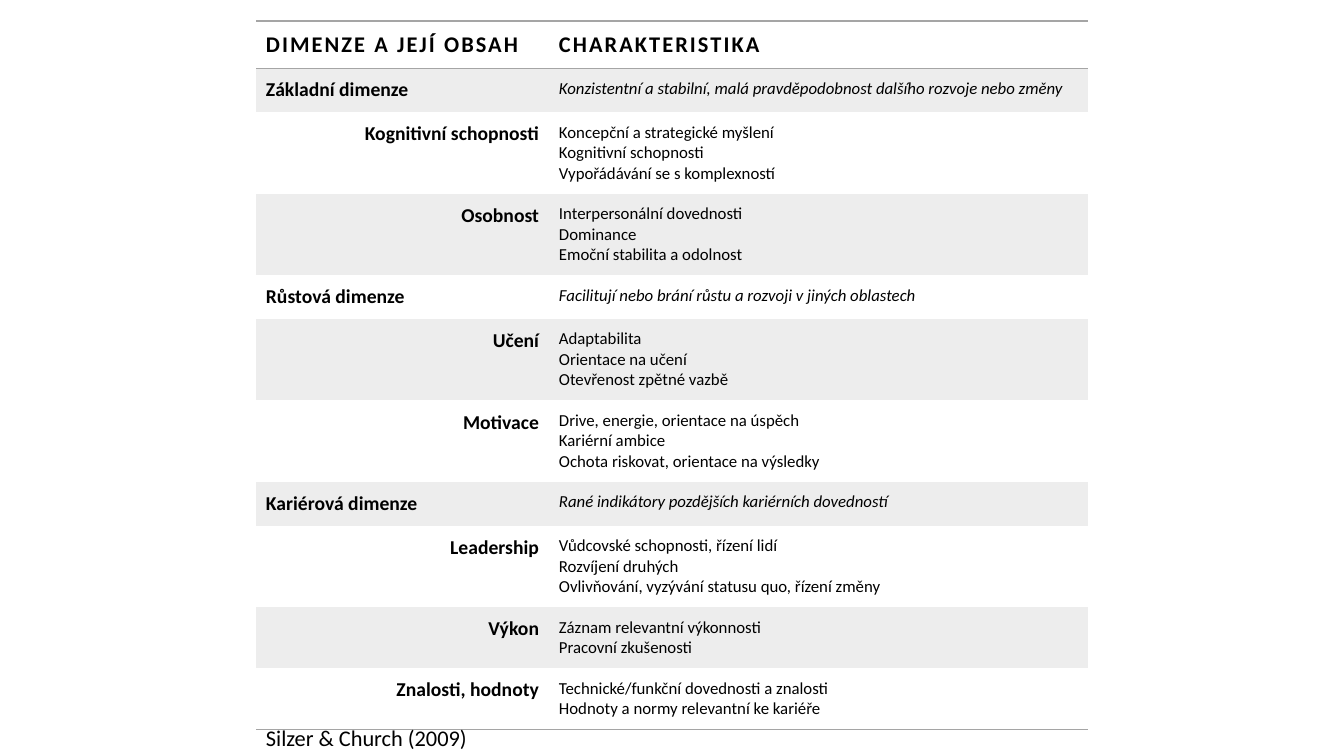
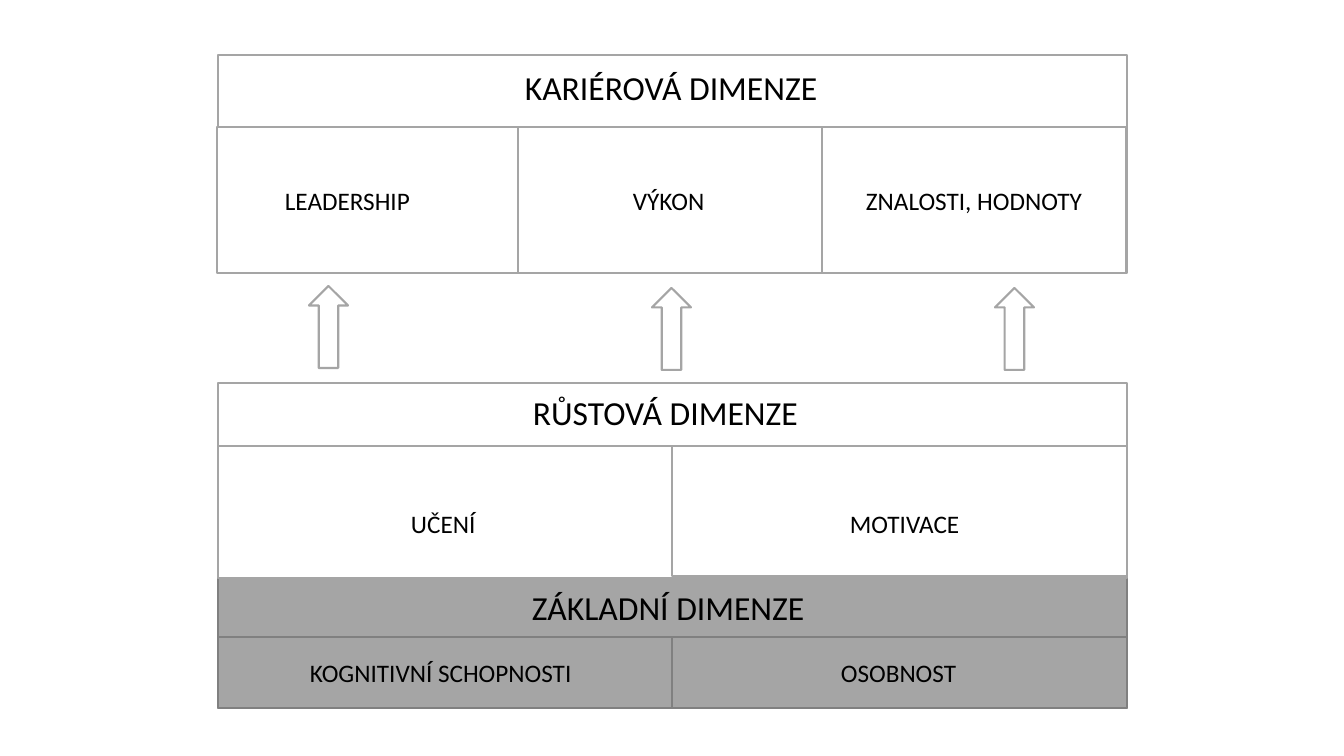
import pptx
import pptx.util
import pptx.dml.color
import pptx.enum.shapes
import pptx.enum.text
import pptx.oxml
import pptx.oxml.ns

EMU_PER_PX = 914400 / 100.8
FONT = "Calibri"
BLACK = pptx.dml.color.RGBColor(0x00, 0x00, 0x00)
WHITE = pptx.dml.color.RGBColor(0xFF, 0xFF, 0xFF)
GREY = pptx.dml.color.RGBColor(0xA5, 0xA5, 0xA5)
DARK_GREY = pptx.dml.color.RGBColor(0x80, 0x80, 0x80)
BAND_GREY = pptx.dml.color.RGBColor(0xED, 0xED, 0xED)
ALIGN = pptx.enum.text.PP_ALIGN
SHAPE = pptx.enum.shapes.MSO_SHAPE


def px(*lengths):
    return [pptx.util.Emu(round(length * EMU_PER_PX)) for length in lengths]


def add_run(paragraph, text, size, bold=False, italic=False):
    run = paragraph.add_run()
    run.text = text
    run.font.name = FONT
    run.font.size = pptx.util.Pt(size)
    run.font.bold = bold
    run.font.italic = italic
    run.font.color.rgb = BLACK
    return run


presentation = pptx.Presentation()
presentation.slide_width, presentation.slide_height = px(1344, 756)
blank = presentation.slide_layouts[6]
table_slide = presentation.slides.add_slide(blank)
model_slide = presentation.slides.add_slide(blank)

# Slide 1: dimensions and their characteristics
HEADER, DIMENSION, CONTENT = "header", "dimension", "content"
rows = [
    (HEADER, "DIMENZE A JEJÍ OBSAH", ["CHARAKTERISTIKA"]),
    (DIMENSION, "Základní dimenze",
     ["Konzistentní a stabilní, malá pravděpodobnost dalšího rozvoje nebo změny"]),
    (CONTENT, "Kognitivní schopnosti",
     ["Koncepční a strategické myšlení", "Kognitivní schopnosti",
      "Vypořádávání se s komplexností"]),
    (CONTENT, "Osobnost",
     ["Interpersonální dovednosti", "Dominance", "Emoční stabilita a odolnost"]),
    (DIMENSION, "Růstová dimenze",
     ["Facilitují nebo brání růstu a rozvoji v jiných oblastech"]),
    (CONTENT, "Učení",
     ["Adaptabilita", "Orientace na učení", "Otevřenost zpětné vazbě"]),
    (CONTENT, "Motivace",
     ["Drive, energie, orientace na úspěch", "Kariérní ambice",
      "Ochota riskovat, orientace na výsledky"]),
    (DIMENSION, "Kariérová dimenze",
     ["Rané indikátory pozdějších kariérních dovedností"]),
    (CONTENT, "Leadership",
     ["Vůdcovské schopnosti, řízení lidí", "Rozvíjení druhých",
      "Ovlivňování, vyzývání statusu quo, řízení změny"]),
    (CONTENT, "Výkon", ["Záznam relevantní výkonnosti", "Pracovní zkušenosti"]),
    (CONTENT, "Znalosti, hodnoty",
     ["Technické/funkční dovednosti a znalosti",
      "Hodnoty a normy relevantní ke kariéře"]),
]
NO_STYLE_NO_GRID = "{2D5ABB26-0587-4C30-8999-92F81FD0307C}"
LABEL_ALIGN = {HEADER: ALIGN.JUSTIFY, DIMENSION: ALIGN.LEFT, CONTENT: ALIGN.RIGHT}

overview = table_slide.shapes.add_table(len(rows), 2, *px(256, 21, 832, 706)).table
overview.first_row = overview.horz_banding = False
overview._tbl.tblPr.find(pptx.oxml.ns.qn("a:tableStyleId")).text = NO_STYLE_NO_GRID
overview.columns[0].width, overview.columns[1].width = px(293, 539)

for row_index, (kind, label, lines) in enumerate(rows):
    if kind == HEADER:
        row_height = 47
    elif kind == DIMENSION:
        row_height = 44
    else:
        row_height = 20 + 20 * len(lines) + 1
    overview.rows[row_index].height = px(row_height)[0]

    for column, texts in enumerate([[label], lines]):
        cell = overview.cell(row_index, column)
        (cell.margin_left, cell.margin_right,
         cell.margin_top, cell.margin_bottom) = px(10, 10, 10, 10)
        if row_index % 2:
            cell.fill.solid()
            cell.fill.fore_color.rgb = BAND_GREY
        else:
            cell.fill.background()

        # Rules around the header and under the last row
        edges = []
        if kind == HEADER:
            edges = ["lnT", "lnB"]
        elif row_index == len(rows) - 1:
            edges = ["lnB"]
        for position, edge in enumerate(edges):
            border = pptx.oxml.parse_xml(
                f'<a:{edge} {pptx.oxml.ns.nsdecls("a")} w="12700"><a:solidFill>'
                f'<a:srgbClr val="{GREY}"/></a:solidFill></a:{edge}>')
            cell._tc.get_or_add_tcPr().insert(position, border)

        # Cell text
        for line_index, text in enumerate(texts):
            frame = cell.text_frame
            paragraph = frame.add_paragraph() if line_index else frame.paragraphs[0]
            paragraph.alignment = ALIGN.JUSTIFY if column else LABEL_ALIGN[kind]
            if kind == HEADER:
                run = add_run(paragraph, text, 16, bold=True)
                run.font._element.set("spc", "150")
            elif column == 0:
                add_run(paragraph, text, 14, bold=True)
            else:
                add_run(paragraph, text, 12, italic=kind == DIMENSION)

citation = table_slide.shapes.add_textbox(*px(256, 719, 922, 37)).text_frame
citation.word_wrap = True
add_run(citation.paragraphs[0], "Silzer & Church (2009)", 16)

# Slide 2: each dimension has a panel, its cells, and labels (text, left, top, width, size)
dimensions = [
    (GREY, DARK_GREY,
     [(218, 576, 909, 132), (218, 637, 455, 71), (672, 637, 455, 71)],
     [("ZÁKLADNÍ DIMENZE", 522, 582, 300, 24),
      ("KOGNITIVNÍ SCHOPNOSTI", 300, 652, 289, 18),
      ("OSOBNOST", 831, 652, 139, 18)]),
    (WHITE, GREY,
     [(218, 383, 909, 195), (218, 446, 455, 132), (672, 446, 455, 130)],
     [("RŮSTOVÁ DIMENZE", 523, 387, 298, 24),
      ("UČENÍ", 401, 503, 88, 18),
      ("MOTIVACE", 840, 503, 130, 18)]),
    (WHITE, GREY,
     [(218, 55, 909, 218), (217, 127, 301, 146),
      (518, 127, 304, 146), (822, 127, 304, 146)],
     [("KARIÉROVÁ DIMENZE", 515, 62, 315, 24),
      ("LEADERSHIP", 275, 180, 147, 18),
      ("VÝKON", 623, 180, 95, 18),
      ("ZNALOSTI, HODNOTY", 856, 180, 238, 18)]),
]
arrows = [(309 + 343 * i, top, 39, 82) for i, top in enumerate([286, 288, 288])]

outlines = [(SHAPE.RECTANGLE, box, fill, line)
            for fill, line, boxes, _ in dimensions for box in boxes]
outlines += [(SHAPE.UP_ARROW, box, WHITE, GREY) for box in arrows]
for preset, box, fill, line in outlines:
    outline = model_slide.shapes.add_shape(preset, *px(*box))
    outline.shadow.inherit = False
    outline.fill.solid()
    outline.fill.fore_color.rgb = fill
    outline.line.color.rgb = line
    outline.line.width = pptx.util.Pt(1.5)

for _, _, _, labels in dimensions:
    for text, left, top, width, size in labels:
        height = 50 if size == 24 else 40
        label_frame = model_slide.shapes.add_textbox(
            *px(left, top, width, height)).text_frame
        label_frame.word_wrap = False
        label_frame.auto_size = pptx.enum.text.MSO_AUTO_SIZE.SHAPE_TO_FIT_TEXT
        add_run(label_frame.paragraphs[0], text, size)

presentation.save("out.pptx")
